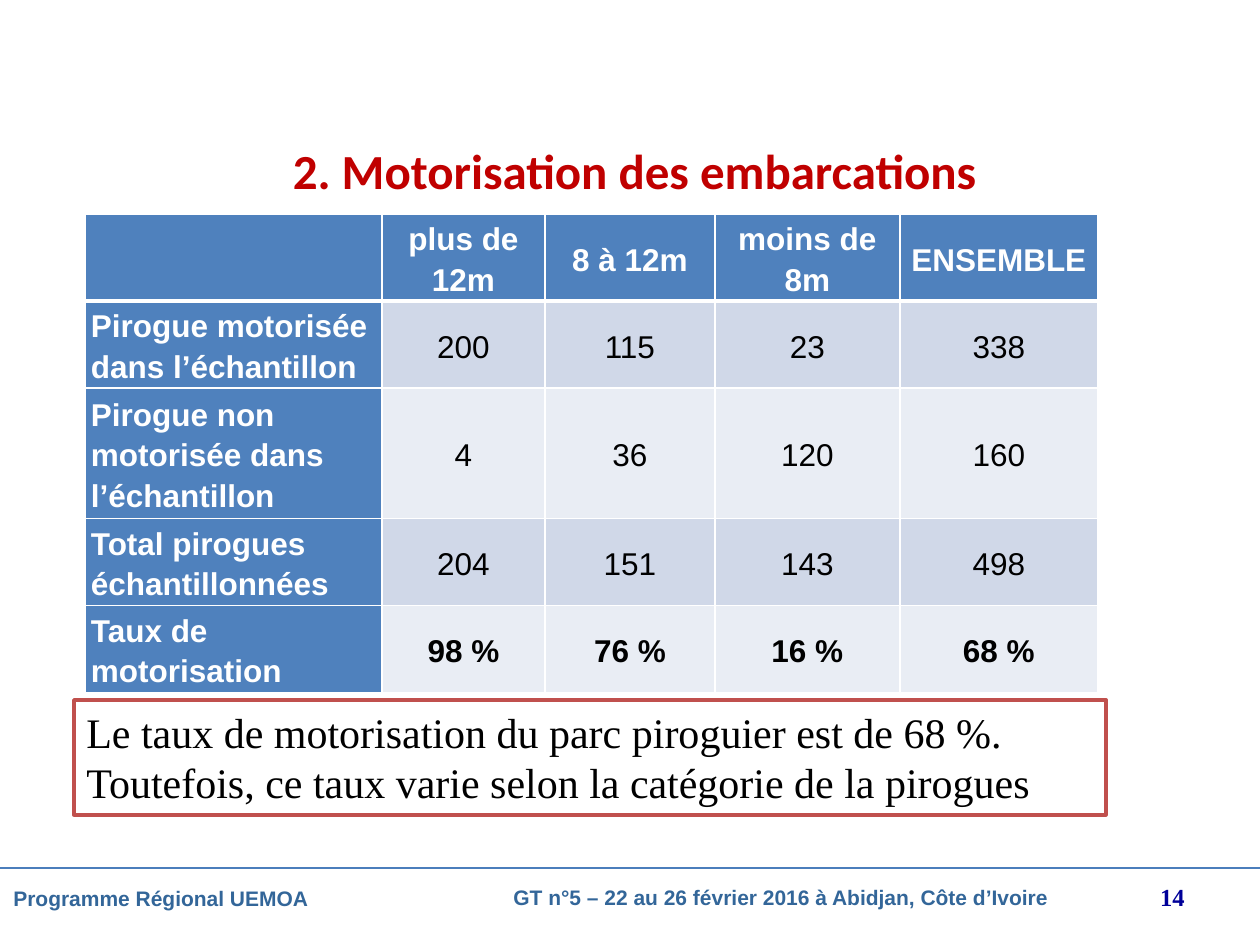
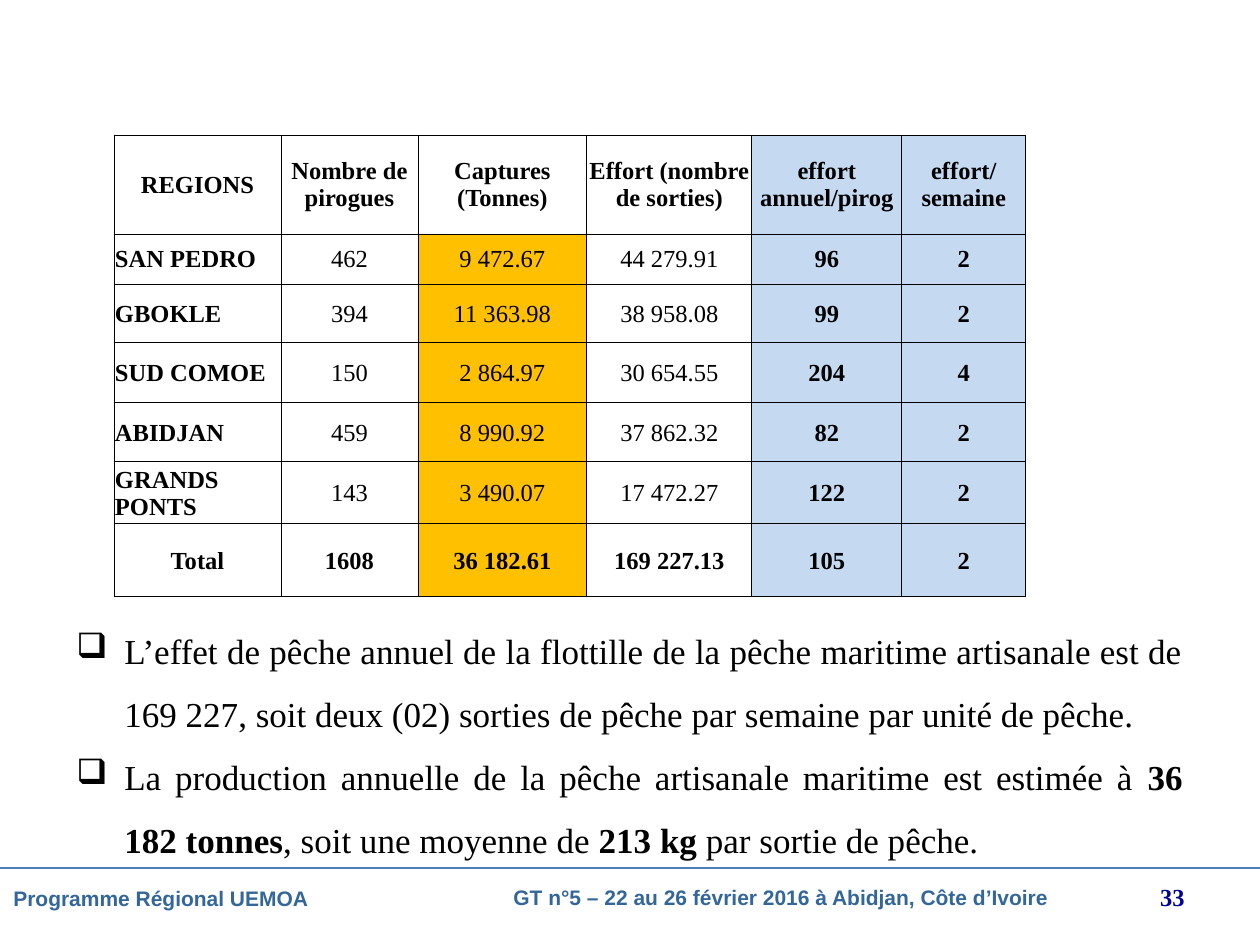
from dataclasses import dataclass

from lxml.etree import SubElement
from pptx import Presentation
from pptx.dml.color import RGBColor
from pptx.enum.shapes import MSO_CONNECTOR, MSO_SHAPE
from pptx.enum.text import MSO_ANCHOR, PP_ALIGN
from pptx.oxml import parse_xml
from pptx.oxml.ns import nsdecls, qn
from pptx.util import Emu, Pt

EMU_PER_PX = 914400 / 126
SLIDE_WIDTH, SLIDE_HEIGHT = 1260, 945


def px(length):
    return Emu(round(length * EMU_PER_PX))


@dataclass(frozen=True)
class Theme:
    white: str = "FFFFFF"
    black: str = "000000"
    title: str = "C00000"
    footer: str = "336699"
    number: str = "000099"
    rule: str = "4B7EBC"
    frame: str = "C0504D"
    header: str = "4F81BD"
    bands: tuple = ("D0D8E8", "E9EDF4")
    catch: str = "FFC000"
    effort: str = "C5D9F1"
    sans: str = "Arial"
    serif: str = "Times New Roman"
    heading: str = "Calibri"
    title_size: int = 28
    note_size: int = 24
    bullet_size: int = 20
    table_size: int = 18
    small_size: int = 14
    footer_size: int = 12


def write(text_frame, paragraphs, *, size, font, color, bold=False,
          align=PP_ALIGN.LEFT, spacing=None, bullet=None, indent=0):
    """Fill a frame; a paragraph is a string or a list of (text, bold) spans."""
    text_frame.word_wrap = True
    for index, spans in enumerate(paragraphs):
        para = text_frame.paragraphs[0] if index == 0 else text_frame.add_paragraph()
        para.alignment = align
        if spacing:
            para.line_spacing = spacing
        if bullet:
            properties = para._p.get_or_add_pPr()
            properties.set("marL", str(px(indent)))
            properties.set("indent", str(-px(indent)))
            SubElement(properties, qn("a:buChar")).set("char", bullet)
        for text, strong in [(spans, bold)] if isinstance(spans, str) else spans:
            span = para.add_run()
            span.text = text
            span.font.size = Pt(size)
            span.font.name = font
            span.font.bold = strong
            span.font.color.rgb = RGBColor.from_string(color)


def set_borders(cell, color, widths):
    """Draw the left, right, top and bottom borders with widths in points."""
    properties = cell._tc.get_or_add_tcPr()
    for index, (side, width) in enumerate(zip("LRTB", widths)):
        properties.insert(index, parse_xml(
            f'<a:ln{side} {nsdecls("a")} w="{Pt(width)}"><a:solidFill>'
            f'<a:srgbClr val="{color}"/></a:solidFill></a:ln{side}>'))


class SlideBuilder:
    def __init__(self, theme):
        self.theme = theme
        self.deck = Presentation()
        self.deck.slide_width = px(SLIDE_WIDTH)
        self.deck.slide_height = px(SLIDE_HEIGHT)
        self.page = None

    def new_page(self, number):
        theme = self.theme
        self.page = self.deck.slides.add_slide(self.deck.slide_layouts[6])
        self.line(0, 868, SLIDE_WIDTH, 868, theme.rule, 0.75)
        self.text(1106, 876, 91, 50, [str(number)], size=theme.small_size,
                  font=theme.serif, color=theme.number, bold=True, align=PP_ALIGN.RIGHT)
        footer = dict(size=theme.footer_size, font=theme.sans, color=theme.footer, bold=True)
        self.text(501, 878, 655, 50,
                  ["GT n°5 – 22 au 26 février 2016 à Abidjan, Côte d’Ivoire"], **footer)
        self.text(1, 879, 517, 50, ["Programme Régional UEMOA"], **footer)

    def line(self, x1, y1, x2, y2, color, width):
        line = self.page.shapes.add_connector(
            MSO_CONNECTOR.STRAIGHT, px(x1), px(y1), px(x2), px(y2))
        line.line.color.rgb = RGBColor.from_string(color)
        line.line.width = Pt(width)
        SubElement(line._element.spPr, qn("a:effectLst"))

    def text(self, left, top, width, height, paragraphs, anchor=MSO_ANCHOR.TOP, **style):
        box = self.page.shapes.add_textbox(px(left), px(top), px(width), px(height))
        box.text_frame.vertical_anchor = anchor
        write(box.text_frame, paragraphs, **style)

    def title(self, text):
        theme = self.theme
        self.text(74, 145, 1121, 49, [text], anchor=MSO_ANCHOR.MIDDLE,
                  size=theme.title_size, font=theme.heading, color=theme.title,
                  bold=True, align=PP_ALIGN.CENTER)

    def framed_note(self, left, top, width, height, paragraphs):
        theme = self.theme
        box = self.page.shapes.add_shape(
            MSO_SHAPE.RECTANGLE, px(left), px(top), px(width), px(height))
        box.shadow.inherit = False
        box.fill.solid()
        box.fill.fore_color.rgb = RGBColor.from_string(theme.white)
        box.line.color.rgb = RGBColor.from_string(theme.frame)
        box.line.width = Pt(2)
        box.text_frame.vertical_anchor = MSO_ANCHOR.TOP
        write(box.text_frame, paragraphs, size=theme.note_size, font=theme.serif,
              color=theme.black, align=PP_ALIGN.JUSTIFY)

    def table(self, left, top, widths, heights, rows, margins, border, look):
        """Build a table; look(row, column) gives fill, border widths and text style."""
        table = self.page.shapes.add_table(
            len(rows), len(widths), px(left), px(top),
            px(sum(widths)), px(sum(heights))).table
        table.first_row = table.horz_banding = False
        for column, width in zip(table.columns, widths):
            column.width = px(width)
        for row, height in zip(table.rows, heights):
            row.height = px(height)
        for r, values in enumerate(rows):
            for c, value in enumerate(values):
                cell = table.cell(r, c)
                fill, borders, style = look(r, c)
                cell.fill.solid()
                cell.fill.fore_color.rgb = RGBColor.from_string(fill)
                set_borders(cell, border, borders)
                cell.vertical_anchor = MSO_ANCHOR.MIDDLE
                (cell.margin_left, cell.margin_top,
                 cell.margin_right, cell.margin_bottom) = map(px, margins)
                write(cell.text_frame, [value] if value else [], **style)


def motorisation_page(builder):
    theme = builder.theme
    rows = [
        ("", "plus de 12m", "8 à 12m", "moins de 8m", "ENSEMBLE"),
        ("Pirogue motorisée dans l’échantillon", "200", "115", "23", "338"),
        ("Pirogue non motorisée dans l’échantillon", "4", "36", "120", "160"),
        ("Total pirogues échantillonnées", "204", "151", "143", "498"),
        ("Taux de motorisation", "98 %", "76 %", "16 %", "68 %"),
    ]

    def look(row, column):
        heading = row == 0 or column == 0
        fill = theme.header if heading else theme.bands[(row - 1) % 2]
        borders = (1, 1, 3 if row == 1 else 1, 3 if row == 0 else 1)
        return fill, borders, dict(
            size=theme.table_size, font=theme.sans, spacing=1.15,
            color=theme.white if heading else theme.black,
            bold=heading or row == len(rows) - 1,
            align=PP_ALIGN.CENTER if column else PP_ALIGN.LEFT)

    builder.new_page(14)
    builder.table(85, 214, (297, 163, 170, 185, 198), (87, 87, 130, 87, 43),
                  rows, (6, 0, 6, 0), theme.white, look)
    builder.framed_note(74, 700, 1032, 115, [
        "Le taux de motorisation du parc piroguier est de 68 %.",
        "Toutefois, ce taux varie selon la catégorie de la pirogues"])
    builder.title("2. Motorisation des embarcations")


def fishing_effort_page(builder):
    theme = builder.theme
    rows = [
        ("REGIONS", "Nombre de pirogues", "Captures (Tonnes)",
         "Effort (nombre de sorties)", "effort annuel/pirog", "effort/semaine"),
        ("SAN PEDRO", "462", "9 472.67", "44 279.91", "96", "2"),
        ("GBOKLE", "394", "11 363.98", "38 958.08", "99", "2"),
        ("SUD COMOE", "150", "2 864.97", "30 654.55", "204", "4"),
        ("ABIDJAN", "459", "8 990.92", "37 862.32", "82", "2"),
        ("GRANDS PONTS", "143", "3 490.07", "17 472.27", "122", "2"),
        ("Total", "1608", "36 182.61", "169 227.13", "105", "2"),
    ]

    def look(row, column):
        region_row = 0 < row < len(rows) - 1
        fill = theme.white
        if column >= 4:
            fill = theme.effort
        elif column == 2 and row > 0:
            fill = theme.catch
        return fill, (0.5,) * 4, dict(
            size=theme.small_size, font=theme.serif, color=theme.black,
            bold=not (region_row and 1 <= column <= 3),
            align=PP_ALIGN.LEFT if region_row and column == 0 else PP_ALIGN.CENTER)

    builder.new_page(33)
    builder.table(114, 135, (167, 137, 169, 165, 150, 124),
                  (99, 50, 59, 60, 59, 62, 73), rows, (1, 1, 1, 0), theme.black, look)
    builder.text(64, 602, 1131, 267, [
        "L’effet de pêche annuel de la flottille de la pêche maritime artisanale est de "
        "169 227, soit deux (02) sorties de pêche par semaine par unité de pêche.",
        [("La production annuelle de la pêche artisanale maritime est estimée à ", False),
         ("36 182 tonnes", True), (", soit une moyenne de ", False),
         ("213 kg ", True), ("par sortie de pêche.", False)],
    ], size=theme.bullet_size, font=theme.serif, color=theme.black,
        align=PP_ALIGN.JUSTIFY, spacing=1.5, bullet="❑", indent=48)


def main():
    builder = SlideBuilder(Theme())
    motorisation_page(builder)
    fishing_effort_page(builder)
    builder.deck.save("out.pptx")


if __name__ == "__main__":
    main()
